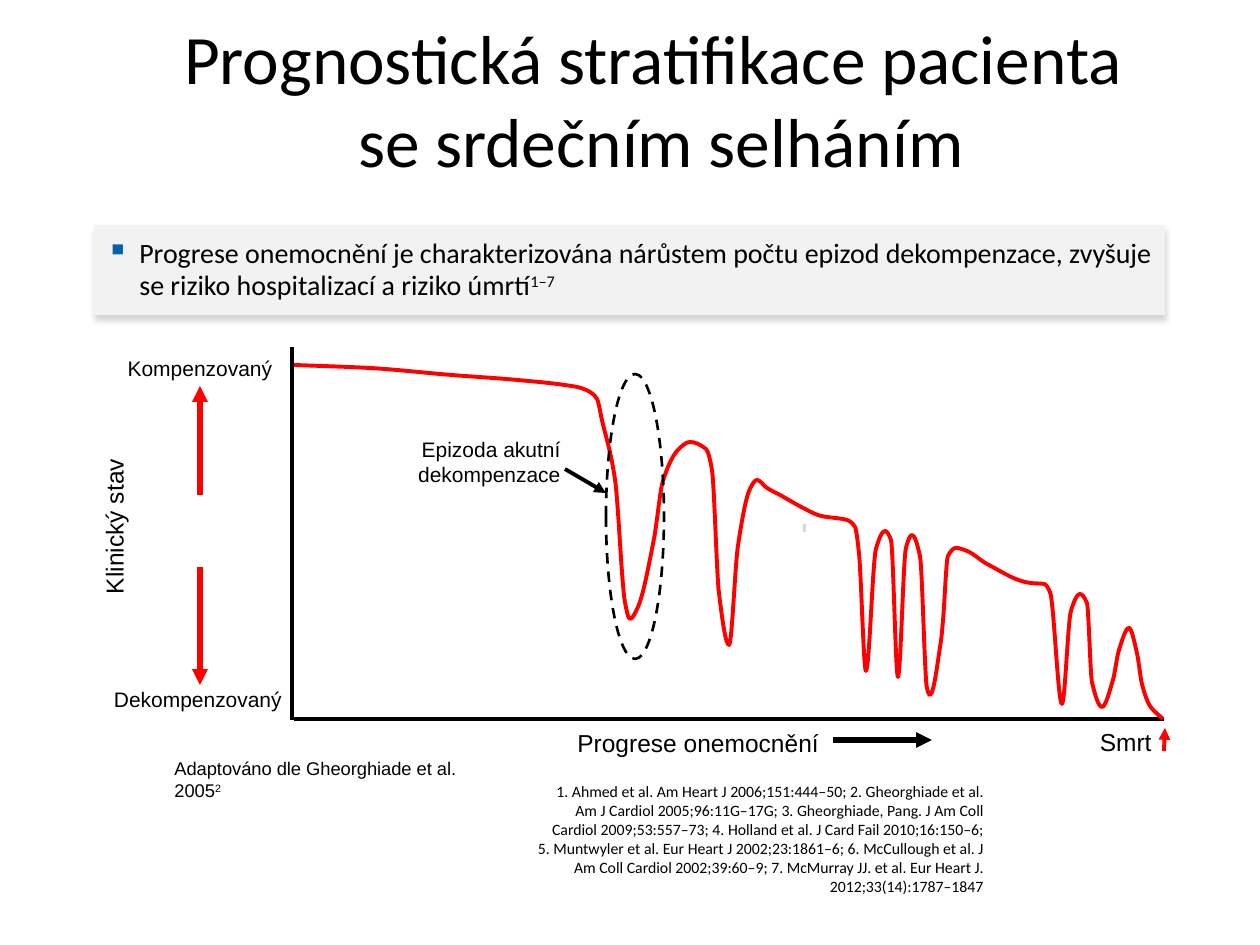
from itertools import pairwise

from lxml.etree import SubElement
from pptx import Presentation
from pptx.dml.color import RGBColor
from pptx.enum.dml import MSO_LINE
from pptx.enum.shapes import MSO_CONNECTOR, MSO_SHAPE
from pptx.enum.text import MSO_ANCHOR as Anchor, MSO_AUTO_SIZE as AutoSize, PP_ALIGN as Align
from pptx.oxml.ns import qn
from pptx.util import Emu, Pt

SCALE = 914400 / 126
COLORS = {"black": "000000", "red": "FF0000", "panel": "F2F2F2", "mark": "D9D9D9", "bullet": "0460A9"}
CURVE = [
    (294, 365), (369, 368), (451, 375), (517, 380), (577, 387), (590, 392), (597, 399), (602, 420),
    (615, 479), (625, 602), (630, 619), (638, 607), (654, 539), (663, 481), (678, 450), (690, 442),
    (706, 449), (712, 470), (719, 593), (729, 645), (738, 546), (750, 489), (757, 480), (767, 488),
    (780, 495), (794, 503), (805, 509), (821, 516), (847, 520), (855, 527), (859, 553), (866, 671),
    (876, 549), (885, 531), (891, 540), (898, 677), (906, 548), (912, 535), (920, 556), (927, 688),
    (930, 695), (941, 641), (943, 621), (948, 556), (956, 548), (967, 551), (987, 564), (1030, 583),
    (1044, 584), (1050, 592), (1062, 704), (1071, 611), (1080, 594), (1087, 603), (1092, 682),
    (1102, 707), (1113, 680), (1119, 650), (1129, 628), (1137, 653), (1142, 684), (1150, 706), (1163, 719),
]
LABELS = [
    ("Progrese onemocnění", (565, 722, 289, 43), 14, Align.LEFT),
    ("Kompenzovaný", (105, 349, 190, 38), 12, Align.CENTER),
    ("Dekompenzovaný", (92, 680, 212, 38), 12, Align.CENTER),
    ("Smrt", (1008, 721, 156, 43), 14, Align.RIGHT),
    ("Epizoda akutní dekompenzace", (384, 430, 189, 63), 12, Align.RIGHT),
]
LINES = [
    ((294, 719), (1164, 719), "black", 2.25, False),
    ((292, 720), (292, 347), "black", 2.25, False),
    ((200, 495), (200, 386), "red", 3, True),
    ((200, 567), (200, 685), "red", 3, True),
    ((833, 740), (932, 740), "black", 3, True),
    ((1164, 751), (1165, 728), "red", 2.25, True),
    ((565, 469), (606, 493), "black", 2.25, True),
]
REFERENCES = (
    "1. Ahmed et al. Am Heart J 2006;151:444–50; 2. Gheorghiade et al. Am J Cardiol 2005;96:11G–17G; "
    "3. Gheorghiade, Pang. J Am Coll Cardiol 2009;53:557–73; 4. Holland et al. J Card Fail 2010;16:150–6; "
    "5. Muntwyler et al. Eur Heart J 2002;23:1861–6; 6. McCullough et al. J Am Coll Cardiol 2002;39:60–9; "
    "7. McMurray JJ. et al. Eur Heart J. 2012;33(14):1787–1847"
)


def px(*lengths):
    """Turn lengths in px into EMU."""
    return [Emu(round(length * SCALE)) for length in lengths]


def color(name):
    """Look up a named colour."""
    return RGBColor.from_string(COLORS[name])


def place(shape, box):
    """Move and size a shape."""
    shape.left, shape.top, shape.width, shape.height = px(*box)


def style(para, size, font="Arial", align=Align.LEFT):
    """Format a whole paragraph."""
    para.alignment = align
    para.font.size, para.font.name = Pt(size), font
    para.font.color.rgb = color("black")


def add_superscript(para, text):
    """Append a raised run."""
    span = para.add_run()
    span.text = text
    span._r.get_or_add_rPr().set("baseline", "30000")


def add_label(page, text, box, size, align=Align.LEFT):
    """Add a wrapped text box and return it."""
    label = page.shapes.add_textbox(*px(*box))
    label.text_frame.word_wrap = True
    para = label.text_frame.paragraphs[0]
    para.add_run().text = text
    style(para, size, align=align)
    return label


def add_line(page, start, end, name, width, arrow):
    """Add a straight line, with an arrowhead at its end if wanted."""
    line = page.shapes.add_connector(MSO_CONNECTOR.STRAIGHT, *px(*start, *end))
    line.line.color.rgb = color(name)
    line.line.width = Pt(width)
    if arrow:
        SubElement(line.line._get_or_add_ln(), qn("a:tailEnd"), type="triangle")
    SubElement(line._element.spPr, qn("a:effectLst"))


def add_preset(page, kind, box, fill=None):
    """Add a preset shape without outline or shadow."""
    shape = page.shapes.add_shape(kind, *px(*box))
    shape.shadow.inherit = False
    shape.line.fill.background()
    if fill:
        shape.fill.solid()
        shape.fill.fore_color.rgb = color(fill)
    else:
        shape.fill.background()
    return shape


def bezier_points(knots):
    """Give control and end points of a monotone cubic through the knots."""
    secants = [(y2 - y1) / (x2 - x1) for (x1, y1), (x2, y2) in pairwise(knots)]
    inner = [2 * a * b / (a + b) if a * b > 0 else 0 for a, b in pairwise(secants)]
    slopes = [secants[0], *inner, secants[-1]]
    points = []
    for (start, end), (leave, arrive) in zip(pairwise(knots), pairwise(slopes)):
        step = (end[0] - start[0]) / 3
        points += [(start[0] + step, start[1] + leave * step), (end[0] - step, end[1] - arrive * step), end]
    return points


def add_curve(page, knots):
    """Draw a smooth open curve through the knots."""
    builder = page.shapes.build_freeform(*px(*knots[0]))
    builder.add_line_segments([px(*point) for point in bezier_points(knots)], close=False)
    curve = builder.convert_to_shape()
    curve.shadow.inherit = False
    curve.fill.background()
    curve.line.color.rgb = color("red")
    curve.line.width = Pt(2.25)
    steps = list(curve._element.iter(qn("a:lnTo")))
    for triple in zip(*[iter(steps)] * 3):
        parent = triple[0].getparent()
        bend = SubElement(parent, qn("a:cubicBezTo"))
        for step in triple:
            bend.append(step[0])
            parent.remove(step)


def add_title(page):
    """Fill the title placeholder."""
    title = page.shapes.title
    place(title, (94, 32, 1134, 132))
    frame = title.text_frame
    frame.auto_size, frame.vertical_anchor = AutoSize.NONE, Anchor.MIDDLE
    para = frame.paragraphs[0]
    para.add_run().text = "Prognostická stratifikace pacienta "
    para.add_line_break()
    para.add_run().text = "se srdečním selháním"
    style(para, 39.6, "Calibri", Align.CENTER)


def add_references(page):
    """Fill the body placeholder with the references."""
    body = page.placeholders[1]
    place(body, (525, 788, 471, 114))
    frame = body.text_frame
    frame.auto_size, frame.vertical_anchor = AutoSize.NONE, Anchor.BOTTOM
    frame.text = REFERENCES
    para = frame.paragraphs[0]
    style(para, 9, "Calibri", Align.RIGHT)
    props = para._p.get_or_add_pPr()
    props.set("marL", "0")
    props.set("indent", "0")
    props.insert_element_before(props.makeelement(qn("a:buNone")), "a:tabLst", "a:defRPr")


def add_statement(page):
    """Add the shaded panel with its bulleted statement."""
    panel = add_preset(page, MSO_SHAPE.RECTANGLE, (94, 225, 1071, 90), "panel")
    effects = panel._element.spPr.find(qn("a:effectLst"))
    shadow = SubElement(effects, qn("a:outerShdw"), blurRad="38100", dist="38100", dir="5400000", rotWithShape="0")
    tint = SubElement(shadow, qn("a:srgbClr"), val=COLORS["black"])
    SubElement(tint, qn("a:alpha"), val="16000")
    frame = panel.text_frame
    frame.word_wrap = True
    frame.margin_top = frame.margin_bottom = frame.margin_left
    para = frame.paragraphs[0]
    para.add_run().text = (
        "Progrese onemocnění je charakterizována nárůstem počtu epizod dekompenzace, "
        "zvyšuje se riziko hospitalizací a riziko úmrtí"
    )
    add_superscript(para, "1–7")
    style(para, 16, "Calibri")
    para.line_spacing = 0.95
    props = para._p.get_or_add_pPr()
    indent = px(33)[0]
    props.set("marL", str(indent))
    props.set("indent", str(-indent))
    tint = props.makeelement(qn("a:buClr"))
    SubElement(tint, qn("a:srgbClr"), val=COLORS["bullet"])
    size = props.makeelement(qn("a:buSzPct"), val="110000")
    sign = props.makeelement(qn("a:buChar"), char="▪")
    for part in (tint, size, sign):
        props.insert_element_before(part, "a:tabLst", "a:defRPr")


def main():
    """Build the slide and save it."""
    deck = Presentation()
    deck.slide_width, deck.slide_height = px(1260, 945)
    page = deck.slides.add_slide(deck.slide_layouts[1])
    add_title(page)
    add_references(page)
    add_statement(page)
    add_label(page, "Klinický stav", (-16, 505, 261, 43), 14, Align.CENTER).rotation = 270
    for label in LABELS:
        add_label(page, *label)
    for line in LINES:
        add_line(page, *line)
    add_curve(page, CURVE)
    add_preset(page, MSO_SHAPE.RECTANGLE, (803, 524, 3, 8), "mark")
    episode = add_preset(page, MSO_SHAPE.OVAL, (606, 374, 58, 285))
    episode.line.color.rgb = color("black")
    episode.line.width = Pt(1.5)
    episode.line.dash_style = MSO_LINE.DASH
    source = add_label(page, "Adaptováno dle Gheorghiade et al. 2005", (162, 751, 344, 57), 10.5)
    add_superscript(source.text_frame.paragraphs[0], "2")
    deck.save("out.pptx")


if __name__ == "__main__":
    main()
